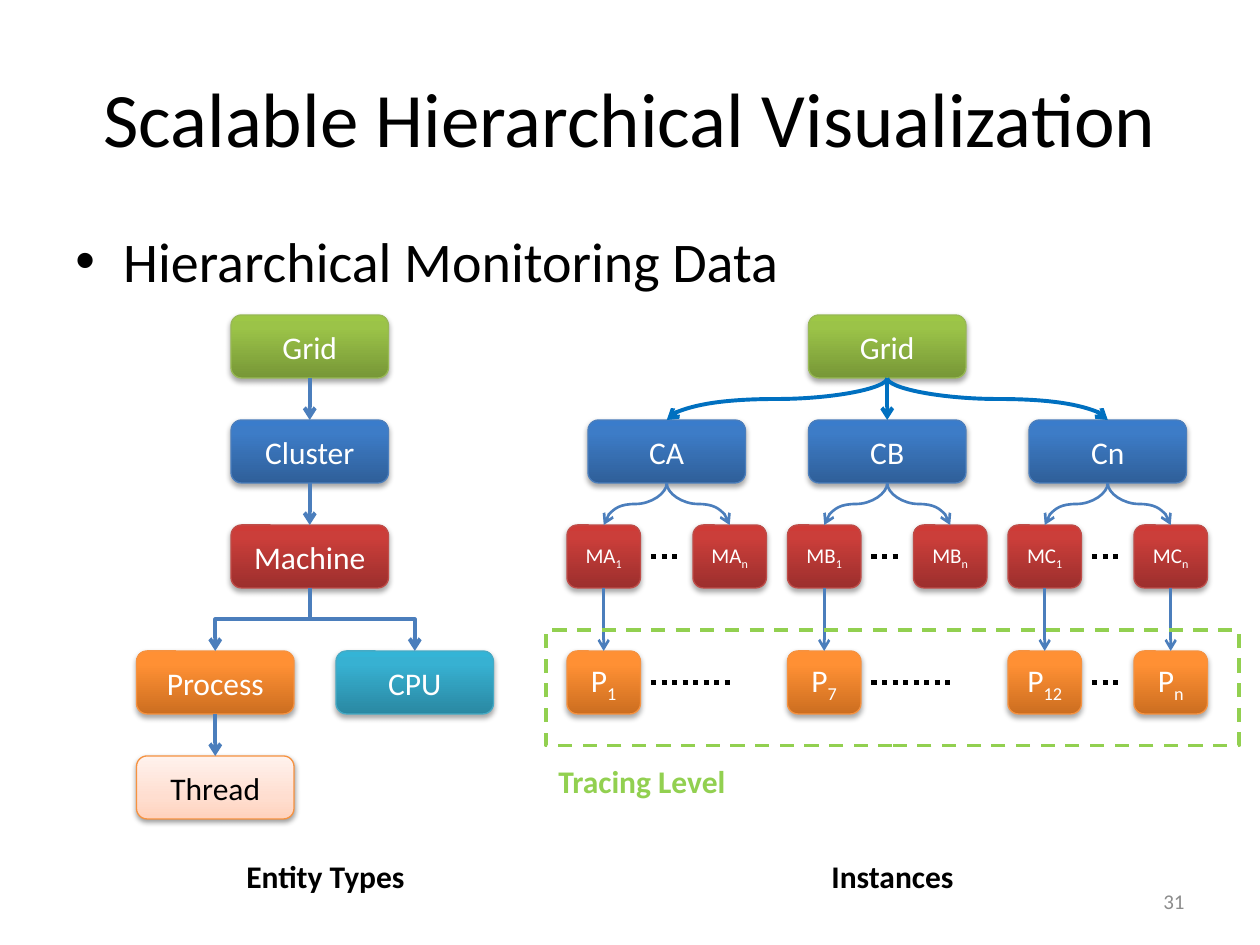
"""Build a slide that sets entity types beside their monitored instances."""
from copy import deepcopy
from pptx import Presentation
from pptx import oxml
from pptx import util as u
from pptx.dml.color import RGBColor
from pptx.enum import dml, shapes, text
from pptx.oxml import ns

BLACK = RGBColor(0x00, 0x00, 0x00)
WHITE = RGBColor(0xFF, 0xFF, 0xFF)
GRAY = RGBColor(0x8C, 0x8C, 0x8C)
LIME = RGBColor(0x92, 0xD0, 0x50)
STEEL = RGBColor(0x4B, 0x7E, 0xBC)
BLUE = RGBColor(0x00, 0x70, 0xC0)

STYLES = {
    "grid": (("779737", "9BC348", "9DC746"), "98B955"),
    "cluster": (("2F5F99", "3D7CC7", "3A7CCB"), "4B7EBC"),
    "machine": (("9C2F2D", "CB3E3A", "CE3B37"), "BF4C48"),
    "process": (("CC6E20", "FF9034", "FF9136"), "F69240"),
    "cpu": (("2A88A2", "37B1D2", "34B4D6"), "46AAC5"),
    "thread": (("FFD2BD", "FFDED0", "FFF2ED"), "F69240"),
}

UNIT = 1 / 12
BOX_HEIGHT, WIDE, NARROW = 6, 15, 7
GRID_Y, CLUSTER_Y, MACHINE_Y, PROCESS_Y, THREAD_Y = 30, 40, 50, 62, 72
FIRST_COLUMN, COLUMN_STEP, LAST_OFFSET = 54, 21, 12

ENTITY_TYPES = [
    ("Grid", "grid", 22, GRID_Y),
    ("Cluster", "cluster", 22, CLUSTER_Y),
    ("Machine", "machine", 22, MACHINE_Y),
    ("Process", "process", 13, PROCESS_Y),
    ("CPU", "cpu", 32, PROCESS_Y),
    ("Thread", "thread", 13, THREAD_Y),
]
ENTITY_LINKS = [("Grid", "Cluster"), ("Cluster", "Machine"), ("Machine", "Process"),
                ("Machine", "CPU"), ("Process", "Thread")]
CLUSTERS = [("CA", "MA", "1", None), ("CB", "MB", "7", None), ("Cn", "MC", "12", "n")]

CAPTIONS = [("Entity Types", 16, 81, 30, BLACK, text.PP_ALIGN.CENTER),
            ("Instances", 70, 81, 30, BLACK, text.PP_ALIGN.CENTER),
            ("Tracing Level", 52, 72, 25, LIME, text.PP_ALIGN.LEFT)]

EFFECTS = (f'<a:effectLst {ns.nsdecls("a")}><a:outerShdw blurRad="40000" dist="{{dist}}" '
           'dir="5400000" rotWithShape="0"><a:srgbClr val="000000"><a:alpha val="{alpha}"/>'
           '</a:srgbClr></a:outerShdw></a:effectLst>')


def units(*values):
    return [u.Inches(value * UNIT) for value in values]


def add_xml(parent, markup):
    parent.append(oxml.parse_xml(f'<a:{markup.format(ns.nsdecls("a"))}/>'))


def style_run(run, size, color, bold=False):
    run.font.name, run.font.size, run.font.bold = "Calibri", u.Pt(size), bold
    run.font.color.rgb = color


def add_text(slide, wording, place, size, color, align=text.PP_ALIGN.LEFT,
             anchor=text.MSO_ANCHOR.TOP, bold=False):
    frame = slide.shapes.add_textbox(*place).text_frame
    frame.word_wrap, frame.vertical_anchor = True, anchor
    frame.text = wording
    paragraph = frame.paragraphs[0]
    paragraph.alignment = align
    style_run(paragraph.runs[0], size, color, bold)
    return paragraph


def add_box(slide, wording, style, left, top, width=WIDE, size=18, subscript=None):
    stops, outline = STYLES[style]
    light = style == "thread"
    shape = slide.shapes.add_shape(shapes.MSO_SHAPE.ROUNDED_RECTANGLE,
                                   *units(left, top, width, BOX_HEIGHT))
    shape.fill.gradient()
    shape.fill.gradient_angle = 90
    properties = shape._element.spPr
    stop_list = properties.find(".//" + ns.qn("a:gsLst"))
    stop_list.append(deepcopy(stop_list[0]))
    positions = (0, 0.35 if light else 0.8, 1)
    for stop, position, color in zip(shape.fill.gradient_stops, positions, stops):
        stop.position, stop.color.rgb = position, RGBColor.from_string(color)
    shape.line.color.rgb = RGBColor.from_string(outline)
    shape.line.width = u.Pt(0.75)
    properties.append(oxml.parse_xml(EFFECTS.format(
        dist=20000 if light else 23000, alpha=38000 if light else 35000)))
    frame = shape.text_frame
    frame.text, frame.vertical_anchor = wording, text.MSO_ANCHOR.MIDDLE
    paragraph = frame.paragraphs[0]
    paragraph.alignment = text.PP_ALIGN.CENTER
    if subscript:
        run = paragraph.add_run()
        run.text = subscript
        run.font._element.set("baseline", "-25000")
    for run in paragraph.runs:
        style_run(run, size, BLACK if light else WHITE)
    return shape


def add_line(slide, kind, ends, color, width):
    line = slide.shapes.add_connector(kind, *ends)
    line.line.color.rgb, line.line.width = color, u.Pt(width)
    add_xml(line._element.spPr, "effectLst {}")
    return line


def add_arrow(slide, parent, child, kind, color=STEEL, width=2.25):
    x1, y1 = parent.left + parent.width // 2, parent.top + parent.height
    x2, y2 = child.left + child.width // 2, child.top
    if abs(x2 - x1) < u.Inches(0.01):
        arrow = add_line(slide, shapes.MSO_CONNECTOR.STRAIGHT, (x1, y1, x1, y2), color, width)
    else:
        drop, shift = y2 - y1, abs(x2 - x1)
        left, top = (x1 + x2 - drop) // 2, (y1 + y2 - shift) // 2
        arrow = add_line(slide, kind, (left, top, left + drop, top + shift), color, width)
        transform = arrow._element.spPr.find(ns.qn("a:xfrm"))
        transform.set("rot", "5400000" if x2 < x1 else "16200000")
        if x2 > x1:
            transform.set("flipH", "1")
    add_xml(arrow._element.spPr.find(ns.qn("a:ln")), 'tailEnd {} type="arrow"')


def add_dots(slide, left, right, top):
    middle = top + BOX_HEIGHT / 2
    dots = add_line(slide, shapes.MSO_CONNECTOR.STRAIGHT,
                    units(left, middle, right, middle), BLACK, 3)
    dots.line.dash_style = dml.MSO_LINE.ROUND_DOT


def add_entity_types(slide):
    boxes = {entity[0]: add_box(slide, *entity) for entity in ENTITY_TYPES}
    for parent, child in ENTITY_LINKS:
        add_arrow(slide, boxes[parent], boxes[child], shapes.MSO_CONNECTOR.ELBOW)


def add_instances(slide):
    curve = shapes.MSO_CONNECTOR.CURVE
    grid = add_box(slide, "Grid", "grid", FIRST_COLUMN + COLUMN_STEP + 2, GRID_Y)
    for index, (cluster_name, machine_name, *processes) in enumerate(CLUSTERS):
        left = FIRST_COLUMN + index * COLUMN_STEP
        cluster = add_box(slide, cluster_name, "cluster", left + 2, CLUSTER_Y)
        add_arrow(slide, grid, cluster, curve, BLUE)
        for offset, number, process in zip((0, LAST_OFFSET), "1n", processes):
            machine = add_box(slide, machine_name, "machine", left + offset, MACHINE_Y,
                              NARROW, 12, number)
            add_arrow(slide, cluster, machine, curve, width=1.5)
            if process:
                box = add_box(slide, "P", "process", left + offset, PROCESS_Y,
                              NARROW, 18, process)
                add_arrow(slide, machine, box, curve, width=1.5)
        add_dots(slide, left + 8, left + 11, MACHINE_Y)
        add_dots(slide, left + 8, left + (11 if processes[1] else 16), PROCESS_Y)


def main():
    presentation = Presentation()
    presentation.slide_width, presentation.slide_height = u.Inches(10), u.Inches(7.5)
    slide = presentation.slides.add_slide(presentation.slide_layouts[6])
    middle = text.MSO_ANCHOR.MIDDLE
    add_text(slide, "Scalable Hierarchical Visualization", units(6, 3.6, 108, 15), 44, BLACK,
             text.PP_ALIGN.CENTER, middle)
    bullet = add_text(slide, "Hierarchical Monitoring Data", units(6, 21, 108, 59.4), 32, BLACK)
    bullet.space_before = u.Pt(6.4)
    properties = bullet._element.get_or_add_pPr()
    properties.set("marL", str(u.Inches(0.38)))
    properties.set("indent", str(u.Inches(-0.38)))
    add_xml(properties, 'buFont {} typeface="Arial"')
    add_xml(properties, 'buChar {} char="•"')
    add_text(slide, "31", units(86, 83.4, 28, 4.8), 12, GRAY, text.PP_ALIGN.RIGHT, middle)
    add_entity_types(slide)
    add_instances(slide)
    frame = slide.shapes.add_shape(shapes.MSO_SHAPE.RECTANGLE, *units(52, 60, 66, 11))
    frame.shadow.inherit = False
    frame.fill.background()
    frame.line.color.rgb, frame.line.width = LIME, u.Pt(2)
    frame.line.dash_style = dml.MSO_LINE.DASH
    for wording, left, top, width, color, align in CAPTIONS:
        add_text(slide, wording, units(left, top, width, 5), 18, color, align, bold=True)
    presentation.save("out.pptx")


if __name__ == "__main__":
    main()
